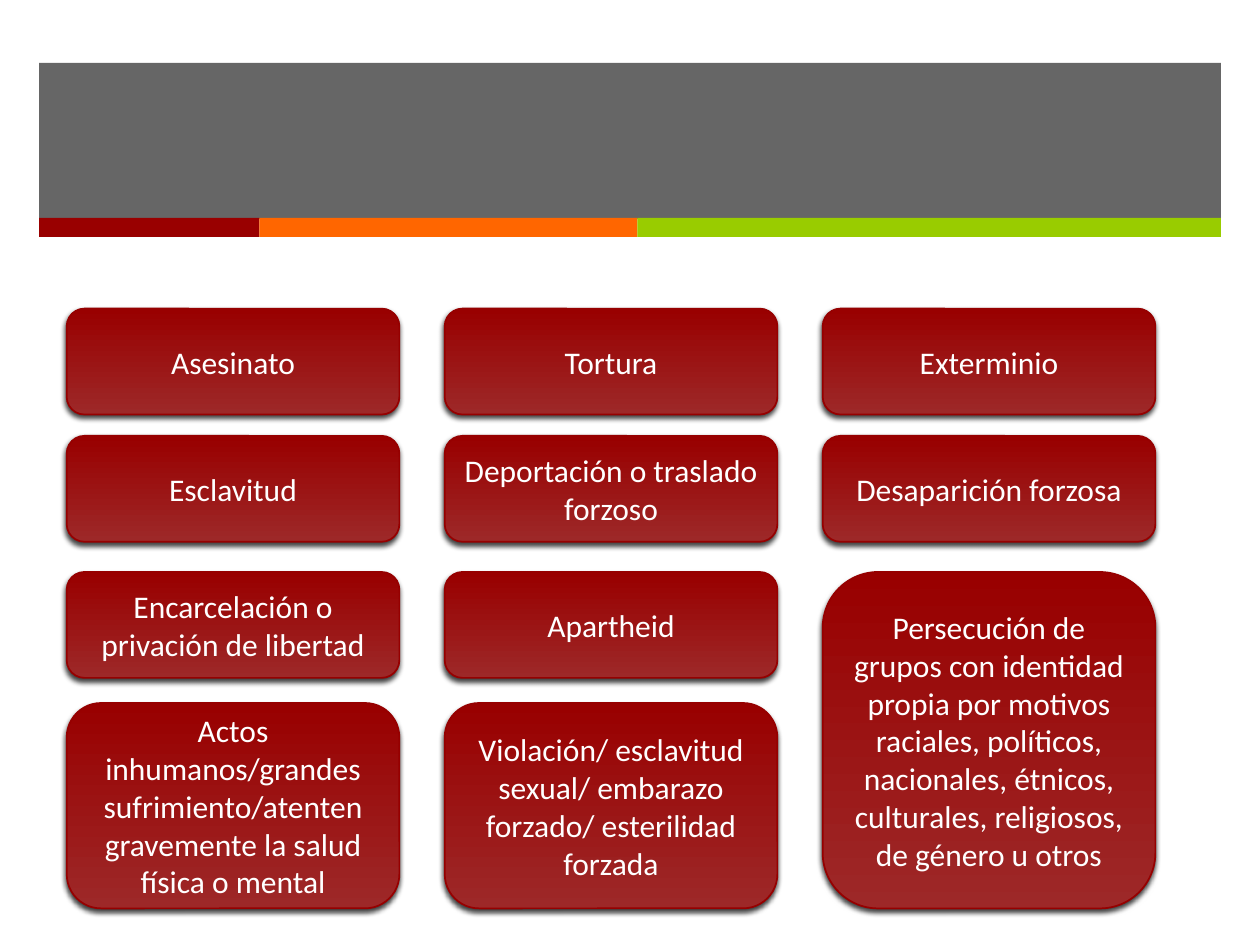
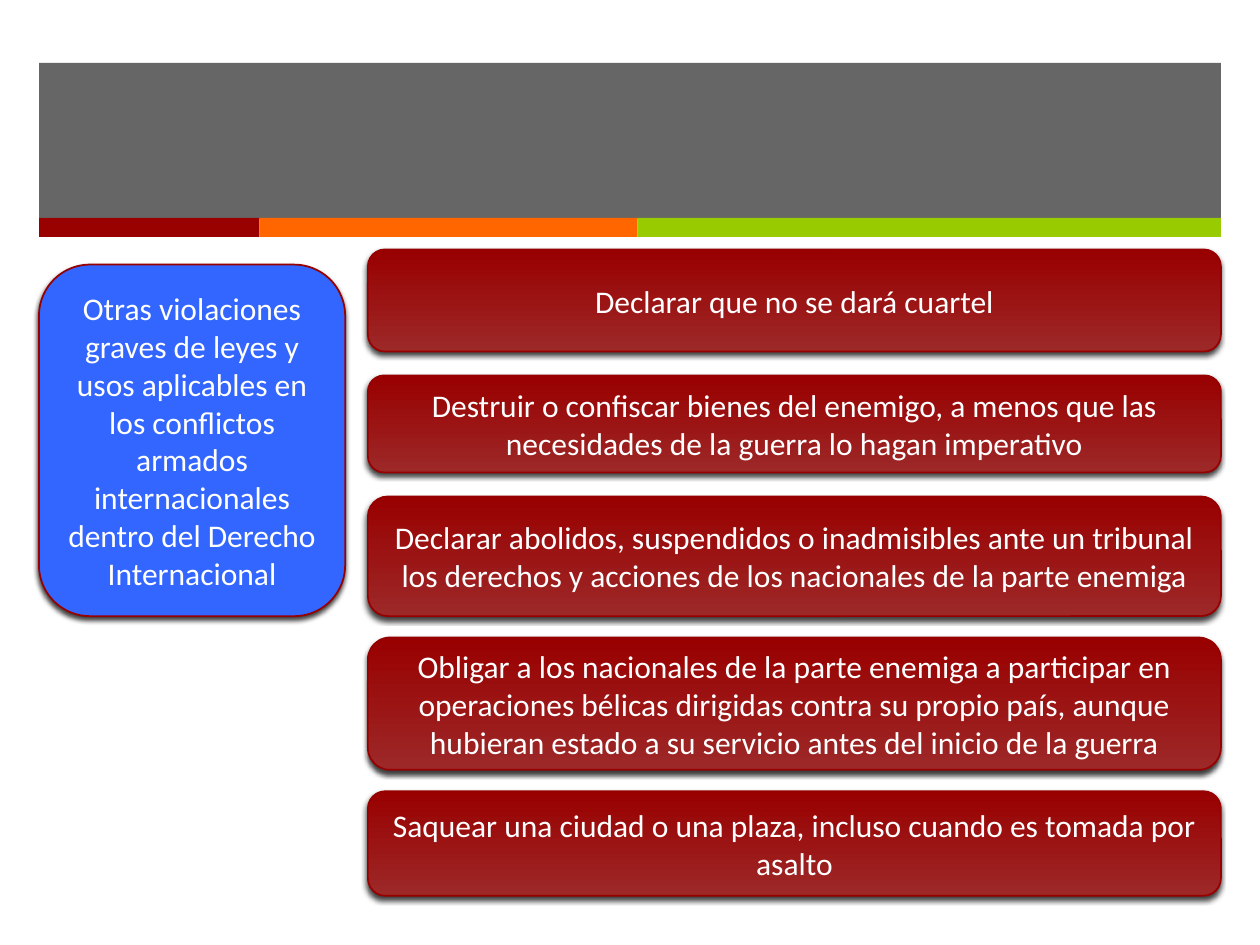
import pptx
import pptx.dml.color
import pptx.enum.shapes
import pptx.enum.text
import pptx.oxml
import pptx.oxml.ns
import pptx.util
from dataclasses import dataclass

Inches = pptx.util.Inches
Pt = pptx.util.Pt
Color = pptx.dml.color.RGBColor.from_string
Shape = pptx.enum.shapes.MSO_SHAPE


@dataclass(frozen=True)
class Theme:
    font: str = "Calibri"
    text_size: int = 18
    text: str = "FFFFFF"
    band: str = "262626"
    red: str = "990000"
    red_light: str = "9D2828"
    orange: str = "FF6600"
    green: str = "99CC00"
    blue: str = "3366FF"
    outline: str = "960000"


theme = Theme()
NAMESPACE = pptx.oxml.ns.nsdecls("a")
SHADOW = (
    f'<a:effectLst {NAMESPACE}><a:outerShdw blurRad="38100" dist="25400" '
    'dir="6600000" rotWithShape="0"><a:srgbClr val="000000">'
    '<a:alpha val="75000"/></a:srgbClr></a:outerShdw></a:effectLst>'
)


def add_band(page, left, top, width, height, color):
    """Add a plain rectangle and move it to the layout of the page."""
    band = page.shapes.add_shape(
        Shape.RECTANGLE, Inches(left), Inches(top), Inches(width), Inches(height))
    band.shadow.inherit = False
    band.fill.solid()
    band.fill.fore_color.rgb = Color(color)
    band.line.fill.background()
    page.slide_layout.shapes.element.append(band.element)
    return band


def add_card(page, left, top, width, height, text, color=None):
    """Add a rounded card: red gradient unless a flat colour is given."""
    card = page.shapes.add_shape(
        Shape.ROUNDED_RECTANGLE,
        Inches(left), Inches(top), Inches(width), Inches(height))
    if color:
        card.fill.solid()
        card.fill.fore_color.rgb = Color(color)
    else:
        card.fill.gradient()
        card.fill.gradient_angle = 90
        for stop, shade in zip(card.fill.gradient_stops, (theme.red_light, theme.red)):
            stop.color.rgb = Color(shade)
    card.line.color.rgb = Color(theme.outline)
    card.line.width = Pt(1)
    card.element.spPr.append(pptx.oxml.parse_xml(SHADOW))

    frame = card.text_frame
    frame.word_wrap = True
    frame.vertical_anchor = pptx.enum.text.MSO_ANCHOR.MIDDLE
    para = frame.paragraphs[0]
    para.text = text
    para.alignment = pptx.enum.text.PP_ALIGN.CENTER
    para.font.name = theme.font
    para.font.size = Pt(theme.text_size)
    para.font.color.rgb = Color(theme.text)


deck = pptx.Presentation()
deck.slide_width, deck.slide_height = Inches(10), Inches(7.5)
blank = deck.slide_layouts[6]
crimes_page = deck.slides.add_slide(blank)
violations_page = deck.slides.add_slide(blank)

# Shared header: translucent band above a three-colour strip
header = add_band(crimes_page, 0.31, 0.5, 9.38, 1.24, theme.band)
header_color = header.element.spPr.find(".//" + pptx.oxml.ns.qn("a:srgbClr"))
header_color.append(pptx.oxml.parse_xml(f'<a:alpha {NAMESPACE} val="70000"/>'))
strip_left = 0.31
for width, color in ((1.75, theme.red), (3, theme.orange), (4.63, theme.green)):
    add_band(crimes_page, strip_left, 1.73, width, 0.15, color)
    strip_left += width

# Slide 1: crimes in three columns, the last card of the third spans two rows
crime_rows = [
    (2.45, 0.84, ["Asesinato", "Tortura", "Exterminio"]),
    (3.46, 0.84, ["Esclavitud", "Deportación o traslado forzoso",
                  "Desaparición forzosa"]),
    (4.54, 0.84, ["Encarcelación o privación de libertad", "Apartheid"]),
    (5.58, 1.63, ["Actos inhumanos/grandes sufrimiento/atenten gravemente "
                  "la salud física o mental",
                  "Violación/ esclavitud sexual/ embarazo forzado/ "
                  "esterilidad forzada"]),
]
first_column, column_step, card_width = 0.53, 3, 2.64
for top, height, crimes in crime_rows:
    for column, crime in enumerate(crimes):
        add_card(crimes_page, first_column + column * column_step, top,
                 card_width, height, crime)
add_card(crimes_page, first_column + 2 * column_step, 4.54, card_width, 2.67,
         "Persecución de grupos con identidad propia por motivos raciales, "
         "políticos, nacionales, étnicos, culturales, religiosos, de género u otros")

# Slide 2: subject on the left, list of violations on the right
add_card(violations_page, 0.31, 2.1, 2.43, 2.79,
         "Otras violaciones graves de leyes y usos aplicables en los conflictos "
         "armados internacionales dentro del Derecho Internacional", theme.blue)
violations = [
    (1.98, 0.81, "Declarar que no se dará cuartel"),
    (2.98, 0.77, "Destruir o confiscar bienes del enemigo, a menos que las "
                 "necesidades de la guerra lo hagan imperativo"),
    (3.94, 0.95, "Declarar abolidos, suspendidos o inadmisibles ante un tribunal "
                 "los derechos y acciones de los nacionales de la parte enemiga"),
    (5.06, 1.05, "Obligar a los nacionales de la parte enemiga a participar en "
                 "operaciones bélicas dirigidas contra su propio país, aunque "
                 "hubieran estado a su servicio antes del inicio de la guerra"),
    (6.28, 0.83, "Saquear una ciudad o una plaza, incluso cuando es tomada por "
                 "asalto"),
]
for top, height, violation in violations:
    add_card(violations_page, 2.92, top, 6.77, height, violation)

deck.save("out.pptx")
